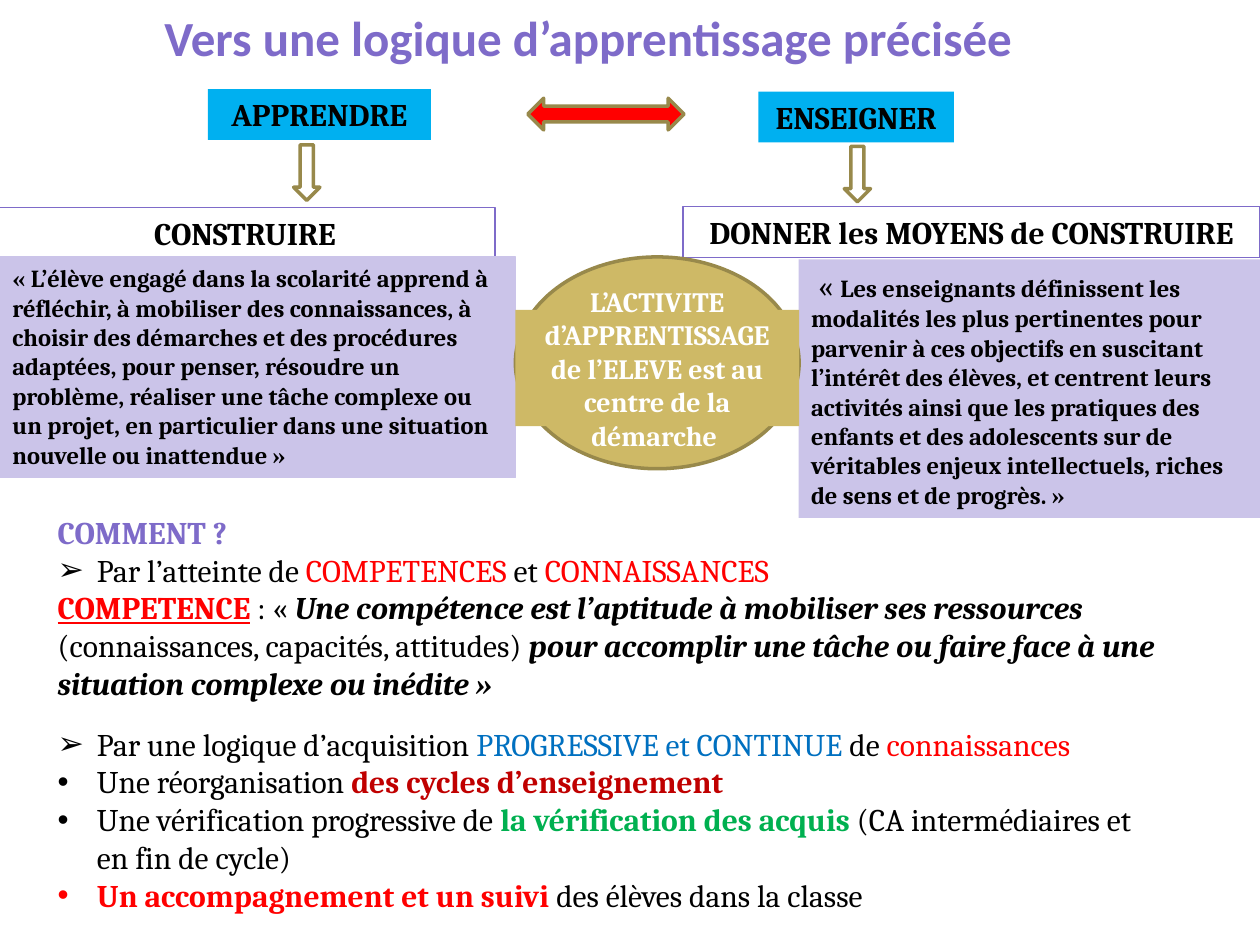
"""Build the slide on learning and teaching, with its boxes, arrows and lists."""
from dataclasses import dataclass

from lxml.etree import SubElement
from pptx import Presentation
from pptx.dml.color import RGBColor
from pptx.enum.shapes import MSO_SHAPE as Preset
from pptx.enum.text import MSO_ANCHOR as Anchor, MSO_AUTO_SIZE as AutoSize, PP_ALIGN as Align
from pptx.oxml.ns import qn
from pptx.util import Cm, Pt

PURPLE = RGBColor(0x7E, 0x6B, 0xC9)
LILAC = RGBColor(0xCB, 0xC4, 0xE9)
SKY = RGBColor(0x00, 0xB0, 0xF0)
BLUE = RGBColor(0x00, 0x70, 0xC0)
RED = RGBColor(0xFF, 0x00, 0x00)
DARK_RED = RGBColor(0xC0, 0x00, 0x00)
GREEN = RGBColor(0x00, 0xB0, 0x50)
GOLD = RGBColor(0xCE, 0xB9, 0x66)
OLIVE = RGBColor(0x98, 0x89, 0x4B)
BLACK = RGBColor(0x00, 0x00, 0x00)
WHITE = RGBColor(0xFF, 0xFF, 0xFF)


@dataclass(frozen=True)
class Area:
    left: float
    top: float
    width: float
    height: float


@dataclass(frozen=True)
class Span:
    text: str
    color: RGBColor = BLACK
    bold: bool = False
    italic: bool = False
    underline: bool = False
    size: int = 18


@dataclass(frozen=True)
class Line:
    spans: tuple[Span, ...]
    bullet: str = ""


@dataclass(frozen=True)
class Block:
    area: Area
    spans: tuple[Span, ...] = ()
    preset: Preset = Preset.RECTANGLE
    fill: RGBColor | None = None
    line: RGBColor | None = None
    weight: float = 0.75
    align: Align = Align.CENTER
    anchor: Anchor = Anchor.TOP
    grow: bool = True


def add_text(para, text: str, *, size: float, color: RGBColor, bold: bool = False,
             italic: bool = False, underline: bool = False, font: str = "Cambria") -> None:
    run = para.add_run()
    run.text = text
    run.font.name, run.font.size = font, Pt(size)
    run.font.bold, run.font.italic, run.font.underline = bold, italic, underline
    run.font.color.rgb = color


def add_spans(para, spans: tuple[Span, ...]) -> None:
    for span in spans:
        add_text(para, span.text, size=span.size, color=span.color, bold=span.bold,
                 italic=span.italic, underline=span.underline)


def place(box, area: Area) -> None:
    box.left, box.top = Cm(area.left), Cm(area.top)
    box.width, box.height = Cm(area.width), Cm(area.height)


def set_bullet(para, bullet: str) -> None:
    properties = para._p.get_or_add_pPr()
    indent = Cm(0.79) if bullet else 0
    properties.set("marL", str(indent))
    properties.set("indent", str(-indent))
    if bullet:
        SubElement(properties, qn("a:buFont"), typeface="Arial")
        SubElement(properties, qn("a:buChar"), char=bullet)
    else:
        SubElement(properties, qn("a:buNone"))


def draw_block(page, block: Block) -> None:
    area = block.area
    box = page.shapes.add_shape(block.preset, Cm(area.left), Cm(area.top),
                                Cm(area.width), Cm(area.height))
    box.shadow.inherit = False
    if block.fill is None:
        box.fill.background()
    else:
        box.fill.solid()
        box.fill.fore_color.rgb = block.fill
    if block.line is None:
        box.line.fill.background()
    else:
        box.line.color.rgb = block.line
        box.line.width = Pt(block.weight)
    if block.spans:
        frame = box.text_frame
        frame.word_wrap = True
        frame.vertical_anchor = block.anchor
        frame.auto_size = AutoSize.SHAPE_TO_FIT_TEXT if block.grow else AutoSize.NONE
        para = frame.paragraphs[0]
        para.alignment = block.align
        add_spans(para, block.spans)


def fill_title(title, area: Area, text: str) -> None:
    place(title, area)
    frame = title.text_frame
    frame.auto_size = AutoSize.NONE
    frame.vertical_anchor = Anchor.MIDDLE
    para = frame.paragraphs[0]
    para.alignment = Align.CENTER
    add_text(para, text, size=28, color=PURPLE, bold=True, font="Calibri")


def fill_list(body, area: Area, lines: tuple[Line, ...]) -> None:
    place(body, area)
    frame = body.text_frame
    frame.word_wrap = True
    frame.auto_size = AutoSize.SHAPE_TO_FIT_TEXT
    for index, line in enumerate(lines):
        para = frame.add_paragraph() if index else frame.paragraphs[0]
        para.space_before = Pt(0)
        set_bullet(para, line.bullet)
        add_spans(para, line.spans)


def heading(text: str) -> tuple[Span, ...]:
    return (Span(text, bold=True),)


LEARNING = (
    "« L’élève engagé dans la scolarité apprend à réfléchir, à mobiliser des connaissances, "
    "à choisir des démarches et des procédures adaptées, pour penser, résoudre un problème, "
    "réaliser une tâche complexe ou un projet, en particulier dans une situation nouvelle "
    "ou inattendue »")
TEACHING = (
    "Les enseignants définissent les modalités les plus pertinentes pour parvenir à ces "
    "objectifs en suscitant l’intérêt des élèves, et centrent leurs activités ainsi que les "
    "pratiques des enfants et des adolescents sur de véritables enjeux intellectuels, riches "
    "de sens et de progrès. »")
ACTIVITY = "L’ACTIVITE d’APPRENTISSAGE de l’ELEVE est au centre de la démarche "

BLOCKS = (
    Block(Area(4.19, 1.8, 4.5, 1.02), heading("APPRENDRE"), fill=SKY),
    Block(Area(15.29, 1.85, 3.94, 1.02), heading("ENSEIGNER"), fill=SKY),
    Block(Area(10.64, 1.98, 3.15, 0.64), preset=Preset.LEFT_RIGHT_ARROW,
          fill=RED, line=OLIVE, weight=2),
    Block(Area(5.92, 2.92, 0.53, 1.12), preset=Preset.DOWN_ARROW, line=OLIVE, weight=2),
    Block(Area(13.77, 4.17, 11.63, 1.02), heading("DONNER les MOYENS de CONSTRUIRE"),
          line=PURPLE),
    Block(Area(-0.1, 4.19, 10.08, 1.02), heading("CONSTRUIRE"), line=PURPLE),
    Block(Area(17.02, 2.95, 0.53, 1.12), preset=Preset.DOWN_ARROW, line=OLIVE, weight=2),
    Block(Area(16.1, 5.23, 9.3, 5.21), (Span(" « "), Span(TEACHING, bold=True, size=14)),
          fill=LILAC, align=Align.LEFT),
    Block(Area(0, 5.18, 10.39, 4.45), (Span(LEARNING, bold=True, size=14),),
          fill=LILAC, line=LILAC, align=Align.LEFT),
    Block(Area(10.39, 5.18, 5.72, 4.27), preset=Preset.OVAL, fill=GOLD, line=OLIVE, weight=2),
    Block(Area(10.39, 6.25, 5.72, 2.34), (Span(ACTIVITY, WHITE, bold=True, size=16),),
          fill=GOLD, anchor=Anchor.MIDDLE, grow=False),
)

HOW = (
    Line((Span("COMMENT ?", PURPLE, bold=True),)),
    Line((Span("Par l’atteinte de "), Span("COMPETENCES", RED), Span(" et "),
          Span("CONNAISSANCES", RED)), "➢"),
    Line((Span("COMPETENCE", RED, bold=True, underline=True), Span(" : « "),
          Span("Une compétence est l’aptitude à mobiliser ses ressources ",
               bold=True, italic=True),
          Span("(connaissances, capacités, attitudes) "),
          Span("pour accomplir une tâche ou faire face à une situation complexe ou inédite »",
               bold=True, italic=True))),
)
PROGRESS = (
    Line((Span("Par une logique d’acquisition "), Span("PROGRESSIVE et CONTINUE ", BLUE),
          Span("de "), Span("connaissances", RED)), "➢"),
    Line((Span("Une réorganisation "),
          Span("des cycles d’enseignement", DARK_RED, bold=True)), "•"),
    Line((Span("Une vérification progressive de "),
          Span("la vérification des acquis ", GREEN, bold=True),
          Span("(CA intermédiaires et en fin de cycle)")), "•"),
    Line((Span("Un accompagnement et un suivi ", RED, bold=True),
          Span("des élèves dans la classe")), "•"),
)


def main() -> None:
    deck = Presentation()
    deck.slide_width, deck.slide_height = Cm(25.4), Cm(19.05)
    page = deck.slides.add_slide(deck.slide_layouts.get_by_name("Two Content"))
    title, how_body, progress_body = page.placeholders
    fill_title(title, Area(0.91, 0, 21.89, 1.47), "Vers une logique d’apprentissage précisée")
    fill_list(how_body, Area(0.91, 10.21, 23.93, 4.11), HOW)
    fill_list(progress_body, Area(0.91, 14.48, 22.58, 4.11), PROGRESS)
    for block in BLOCKS:
        draw_block(page, block)
    deck.save("out.pptx")


if __name__ == "__main__":
    main()
